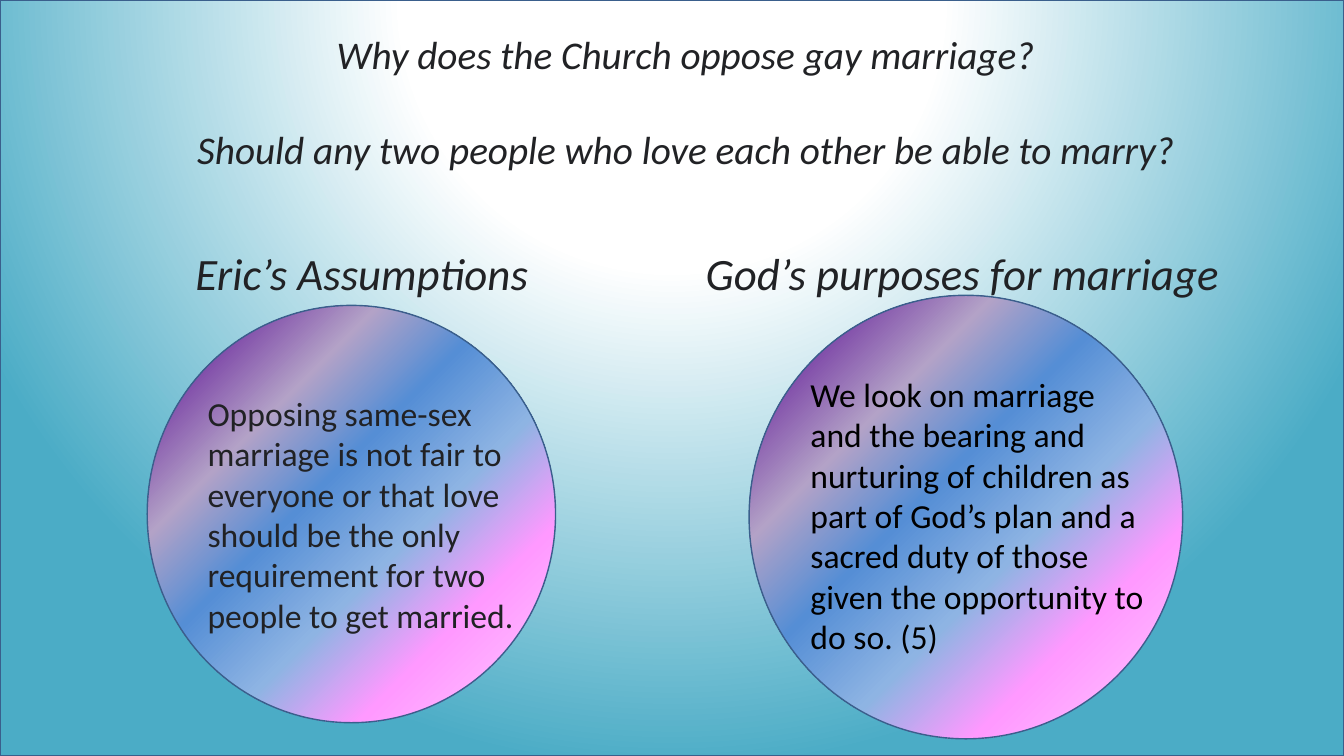
from dataclasses import dataclass
from lxml.etree import SubElement
from pptx import Presentation
from pptx.dml.color import RGBColor
from pptx.enum.shapes import MSO_SHAPE
from pptx.enum.text import MSO_ANCHOR, MSO_AUTO_SIZE, PP_ALIGN
from pptx.oxml.ns import qn
from pptx.util import Inches, Pt


@dataclass(frozen=True)
class Theme:
    font: str = "Calibri"
    ink: str = "212225"
    black: str = "000000"
    outline: str = "3A5F8C"
    question: int = 28
    heading: int = 32
    body: int = 24
    question_gap: int = 34
    backdrop: tuple = ((0, "FFFFFF"), (35, "FFFFFF"), (100, "4BACC6"))
    disc: tuple = ((0, "FFCCFF"), (24, "FF99FF"), (40, "8EB4E3"),
                   (57, "558ED5"), (72, "B3A2C7"), (90, "7030A0"))


THEME = Theme()


def set_attrs(target, values):
    for name, value in values.items():
        setattr(target, name, value)


def fill_radial(shape, stops, focus):
    shape.fill.gradient()
    grad = shape._element.spPr.find(qn("a:gradFill"))
    for child in list(grad):
        grad.remove(child)
    stop_list = SubElement(grad, qn("a:gsLst"))
    for pos, color in stops:
        stop = SubElement(stop_list, qn("a:gs"), pos=str(pos * 1000))
        SubElement(stop, qn("a:srgbClr"), val=color)
    circle = SubElement(grad, qn("a:path"), path="circle")
    SubElement(circle, qn("a:fillToRect"),
               {side: str(v * 1000) for side, v in zip("ltrb", focus)})


def add_gradient_shape(shapes, kind, box, stops, focus):
    sp = shapes.add_shape(kind, *map(Inches, box))
    sp.shadow.inherit = False
    fill_radial(sp, stops, focus)
    sp.line.color.rgb = RGBColor.from_string(THEME.outline)
    sp.line.width = Pt(1)
    return sp


def write(tf, lines, size, color=THEME.ink, italic=False, align=PP_ALIGN.LEFT, gap=0):
    set_attrs(tf, {"word_wrap": True, "auto_size": MSO_AUTO_SIZE.NONE,
                   "vertical_anchor": MSO_ANCHOR.TOP})
    for i, line in enumerate(lines):
        p = tf.add_paragraph() if i else tf.paragraphs[0]
        set_attrs(p, {"alignment": align, "space_before": Pt(gap if i else 0)})
        r = p.add_run()
        r.text = line
        set_attrs(r.font, {"name": THEME.font, "size": Pt(size), "italic": italic})
        r.font.color.rgb = RGBColor.from_string(color)


def add_backdrop(s, box):
    sp = add_gradient_shape(s.shapes, MSO_SHAPE.RECTANGLE, box,
                            THEME.backdrop, (50, -80, 50, 180))
    s.shapes.title._element.addprevious(sp._element)


def add_questions(s, box, questions):
    title = s.shapes.title
    set_attrs(title, dict(zip(("left", "top", "width", "height"), map(Inches, box))))
    write(title.text_frame, questions, THEME.question, italic=True,
          align=PP_ALIGN.CENTER, gap=THEME.question_gap)


def add_heading(s, box, text):
    tb = s.shapes.add_textbox(*map(Inches, box))
    write(tb.text_frame, [text], THEME.heading, italic=True)


def add_disc(s, box, inset, text, color):
    left, top, width, height = box
    dx, dy, text_width, text_height = inset
    group = s.shapes.add_group_shape()
    add_gradient_shape(group.shapes, MSO_SHAPE.OVAL, (left, top, width, height),
                       THEME.disc, (100, 100, 0, 0))
    tb = group.shapes.add_textbox(Inches(left + dx), Inches(top + dy),
                                  Inches(text_width), Inches(text_height))
    write(tb.text_frame, [text], THEME.body, color)


def build_marriage_slide(prs):
    s = prs.slides.add_slide(prs.slide_layouts[5])
    add_backdrop(s, (0, 0, 13.33, 7.5))
    add_questions(s, (0.55, 0.25, 12.5, 1.51),
                  ["Why does the Church oppose gay marriage?",
                   "Should any two people who love each other be able to marry?"])
    add_heading(s, (1.84, 2.39, 4.3, 0.64), "Eric’s Assumptions")
    add_heading(s, (6.9, 2.39, 5.73, 0.64), "God’s purposes for marriage")
    add_disc(s, (1.46, 3.03, 4.05, 4.14), (0.5, 0.82, 3.51, 2.52),
             "Opposing same-sex marriage is not fair to everyone or that love "
             "should be the only requirement for two people to get married.",
             THEME.ink)
    add_disc(s, (7.43, 2.93, 4.3, 4.4), (0.51, 0.73, 3.57, 2.93),
             "We look on marriage and the bearing and nurturing of children as "
             "part of God’s plan and a sacred duty of those given the "
             "opportunity to do so. (5)", THEME.black)


def main():
    prs = Presentation()
    set_attrs(prs, {"slide_width": Inches(13.33), "slide_height": Inches(7.5)})
    build_marriage_slide(prs)
    prs.save("out.pptx")


if __name__ == "__main__":
    main()
